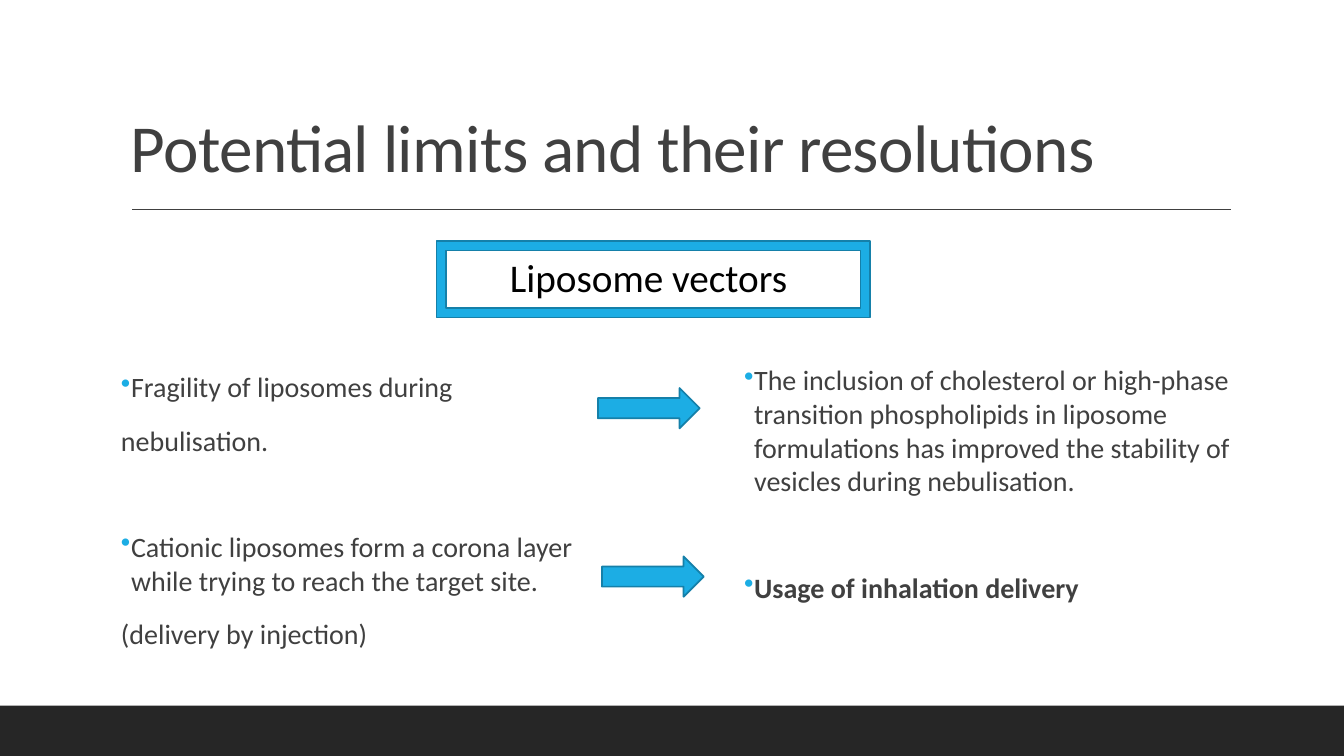
from lxml import etree
from pptx import Presentation
from pptx.dml.color import RGBColor as RGB
from pptx.enum.shapes import MSO_CONNECTOR as LINK, MSO_SHAPE as SHAPE
from pptx.enum.text import MSO_ANCHOR as ANCHOR
from pptx.oxml.ns import qn
from pptx.util import Pt

PX = 9144
HUES = {"text": "404040", "band": "262626", "blue": "1CADE4", "edge": "1580A9", "black": "000000"}

deck = Presentation()
deck.slide_width, deck.slide_height = 1333 * PX, 750 * PX
slide = deck.slides.add_slide(deck.slide_layouts[6])
items = slide.shapes


def draw(kind, box, fill, edge=None):
    shape = items.add_shape(kind, *[n * PX for n in box])
    shape.shadow.inherit = False
    shape.fill.solid()
    shape.fill.fore_color.rgb = RGB.from_string(HUES[fill])
    if edge:
        shape.line.color.rgb = RGB.from_string(HUES[edge])
        shape.line.width = Pt(1.25)
    else:
        shape.line.fill.background()


def write(par, text, size, hue="text", bold=False):
    run = par.add_run()
    run.text = text
    font = run.font
    font.name, font.size, font.bold = "Calibri", Pt(size), bold
    font.color.rgb = RGB.from_string(HUES[hue])
    return run


draw(SHAPE.RECTANGLE, (0, 700, 1333, 50), "band")

rule = items.add_connector(LINK.STRAIGHT, 131 * PX, 208 * PX, 1221 * PX, 208 * PX)
rule.line.color.rgb = RGB.from_string(HUES["text"])
rule.line.width = Pt(1)
etree.SubElement(rule._element.spPr, qn("a:effectLst"))

title = items.add_textbox(120 * PX, 31 * PX, 1100 * PX, 159 * PX).text_frame
title.word_wrap = True
title.vertical_anchor = ANCHOR.BOTTOM
head = title.paragraphs[0]
head.line_spacing = 0.9
run = write(head, "Potential limits and their resolutions", 48)
run.font._element.set("spc", "-50")

bodies = [
    ((120, 362, 507, 357), [
        ("Fragility of liposomes during", True, 12, False),
        ("nebulisation.", False, 12, False),
        ("Cationic liposomes form a corona layer while trying to reach the target site.", True, 50, False),
        ("(delivery by injection)", False, 12, False),
    ]),
    ((738, 355, 507, 410), [
        ("The inclusion of cholesterol or high-phase transition phospholipids in liposome "
         "formulations has improved the stability of vesicles during nebulisation.", True, 12, False),
        ("Usage of inhalation delivery", True, 50, True),
    ]),
]
for box, lines in bodies:
    frame = items.add_textbox(*[n * PX for n in box]).text_frame
    frame.word_wrap = True
    frame.margin_left = frame.margin_right = 0
    for i, (text, dot, gap, bold) in enumerate(lines):
        par = frame.add_paragraph() if i else frame.paragraphs[0]
        par.space_before, par.space_after = Pt(gap), Pt(2)
        if dot:
            props = par._p.get_or_add_pPr()
            props.set("marL", str(10 * PX))
            props.set("indent", str(-10 * PX))
            tint = etree.SubElement(props, qn("a:buClr"))
            etree.SubElement(tint, qn("a:srgbClr"), val=HUES["blue"])
            etree.SubElement(props, qn("a:buChar"), char="•")
        write(par, text, 20, bold=bold)

for left, top in [(597, 552), (593, 385)]:
    draw(SHAPE.RIGHT_ARROW, (left, top, 101, 40), "blue", "edge")

label = items.add_textbox(496 * PX, 246 * PX, 303 * PX, 57 * PX).text_frame
label.word_wrap = True
write(label.paragraphs[0], "Liposome vectors", 28, "black")
draw(SHAPE.FRAME, (433, 239, 430, 76), "blue", "edge")

deck.save("out.pptx")
